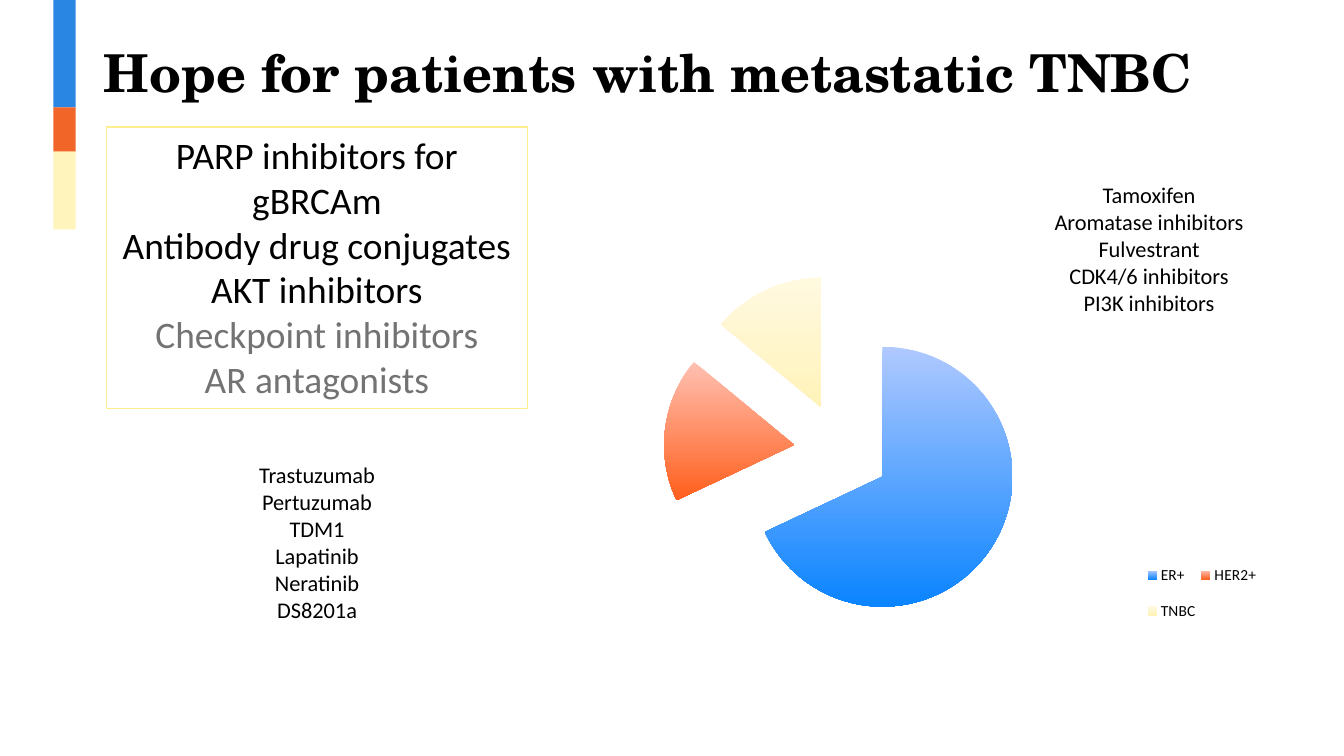
"""Build the slide on treatment options for metastatic TNBC."""
from lxml import etree
from pptx import Presentation, util as u
from pptx.chart.data import CategoryChartData
from pptx.dml.color import RGBColor
from pptx.enum import chart as c, shapes as s, text as t
from pptx.oxml import ns

BLUE = RGBColor(0x29, 0x86, 0xE2)
ORANGE = RGBColor(0xF2, 0x65, 0x29)
CREAM = RGBColor(0xFF, 0xF5, 0xBC)
YELLOW = RGBColor(0xFF, 0xEE, 0x90)
WHITE = RGBColor(0xFF, 0xFF, 0xFF)
BLACK = RGBColor(0, 0, 0)
GREY = RGBColor(0x73, 0x73, 0x73)
SLICE_GRADIENTS = [
    (RGBColor(0xB0, 0xC9, 0xFF), RGBColor(0x0A, 0x84, 0xFF)),
    (RGBColor(0xFF, 0xC0, 0xB2), RGBColor(0xFF, 0x5F, 0x1C)),
    (RGBColor(0xFF, 0xF9, 0xE0), RGBColor(0xFF, 0xF3, 0xBA)),
]

prs = Presentation()
prs.slide_width, prs.slide_height = u.Inches(13.333), u.Inches(7.5)
slide = prs.slides.add_slide(prs.slide_layouts[5])


def area(left, top, width, height):
    """Turn percentages of the slide into a position and size."""
    across, down = prs.slide_width / 100, prs.slide_height / 100
    return [int(n) for n in (left * across, top * down, width * across, height * down)]


def set_layout(owner, target, x, y, w, h):
    """Place a chart part by shares of the chart area."""
    layout = owner.find(ns.qn("c:layout"))
    if layout is None:
        layout = etree.Element(ns.qn("c:layout"))
        owner.insert(1 if target is None else 0, layout)
    manual = etree.SubElement(layout, ns.qn("c:manualLayout"))
    modes = [("xMode", "edge"), ("yMode", "edge"), ("x", x), ("y", y), ("w", w), ("h", h)]
    if target:
        modes.insert(0, ("layoutTarget", target))
    for tag, value in modes:
        etree.SubElement(manual, ns.qn(f"c:{tag}")).set("val", str(value))


bar_top = 0
for color, bar_height in [(BLUE, 14.2), (ORANGE, 5.87), (CREAM, 10.27)]:
    bar = slide.shapes.add_shape(s.MSO_SHAPE.RECTANGLE, *area(3.98, bar_top, 1.65, bar_height))
    bar.shadow.inherit = False
    bar.fill.solid()
    bar.fill.fore_color.rgb = color
    bar.line.fill.background()
    bar_top += bar_height

title = slide.shapes.title
title.left, title.top, title.width, title.height = area(6.98, 1.47, 91.13, 16.13)
title.text_frame.text = "Hope for patients with metastatic TNBC"
title.text_frame.vertical_anchor = t.MSO_ANCHOR.MIDDLE
heading = title.text_frame.paragraphs[0]
heading.alignment = t.PP_ALIGN.LEFT
heading.font.name, heading.font.size, heading.font.bold = "TeX Gyre Schola", u.Pt(37.3), True
heading.font.color.rgb = BLACK

subtypes = CategoryChartData()
subtypes.categories = ["ER+", "HER2+", "TNBC"]
subtypes.add_series("Series 1", (68, 18, 14))
pie = slide.shapes.add_chart(c.XL_CHART_TYPE.PIE, *area(34.95, 32.93, 59.55, 52.93), subtypes).chart
pie.has_title = False
pie.font.name, pie.font.size = "Calibri", u.Pt(18)
pie.font.color.rgb = BLACK
pie.has_legend = True
pie.legend.position = c.XL_LEGEND_POSITION.RIGHT
pie.legend.include_in_layout = False
pie.legend.font.name, pie.legend.font.size = "Calibri", u.Pt(11)
pie.legend.font.color.rgb = BLACK
shares = pie.plots[0].series[0]
pie.plots[0].vary_by_categories = True
for index, gradient in enumerate(SLICE_GRADIENTS):
    slice_format = shares.points[index].format
    slice_format.fill.gradient()
    slice_format.fill.gradient_angle = 270
    for stop, color in zip(slice_format.fill.gradient_stops, gradient):
        stop.color.rgb = color
    slice_format.line.fill.background()
explosion = etree.Element(ns.qn("c:explosion"))
explosion.set("val", "37")
shares._element.find(ns.qn("c:dPt")).addprevious(explosion)
set_layout(pie._chartSpace.find(".//" + ns.qn("c:plotArea")), "inner", 0.07, 0.06, 0.79, 0.89)
set_layout(pie.legend._element, None, 0.84, 0.75, 0.15, 0.22)

TREATMENTS = [
    (area(72, 23.33, 27, 19.33), 16, None,
     ["Tamoxifen", "Aromatase inhibitors", "Fulvestrant", "CDK4/6 inhibitors", "PI3K inhibitors"], []),
    (area(11.78, 60.4, 23.63, 22.93), 16, None,
     ["Trastuzumab", "Pertuzumab", "TDM1", "Lapatinib", "Neratinib", "DS8201a"], []),
    (area(7.95, 16.8, 31.28, 37.2), 26.7, YELLOW,
     ["PARP inhibitors for gBRCAm", "Antibody drug conjugates", "AKT inhibitors"],
     ["Checkpoint inhibitors", "AR antagonists"]),
]
for position, size, border, current, emerging in TREATMENTS:
    drugs = slide.shapes.add_textbox(*position)
    if border:
        drugs.fill.solid()
        drugs.fill.fore_color.rgb = WHITE
        drugs.line.color.rgb = border
        drugs.line.width = u.Pt(0.75)
    drugs.text_frame.word_wrap = True
    drugs.text_frame.auto_size = t.MSO_AUTO_SIZE.SHAPE_TO_FIT_TEXT
    drugs.text_frame.text = "\n".join(current + emerging)
    for paragraph in drugs.text_frame.paragraphs:
        paragraph.alignment = t.PP_ALIGN.CENTER
        paragraph.font.name, paragraph.font.size = "Calibri", u.Pt(size)
        paragraph.font.color.rgb = GREY if paragraph.text in emerging else BLACK

prs.save("out.pptx")
